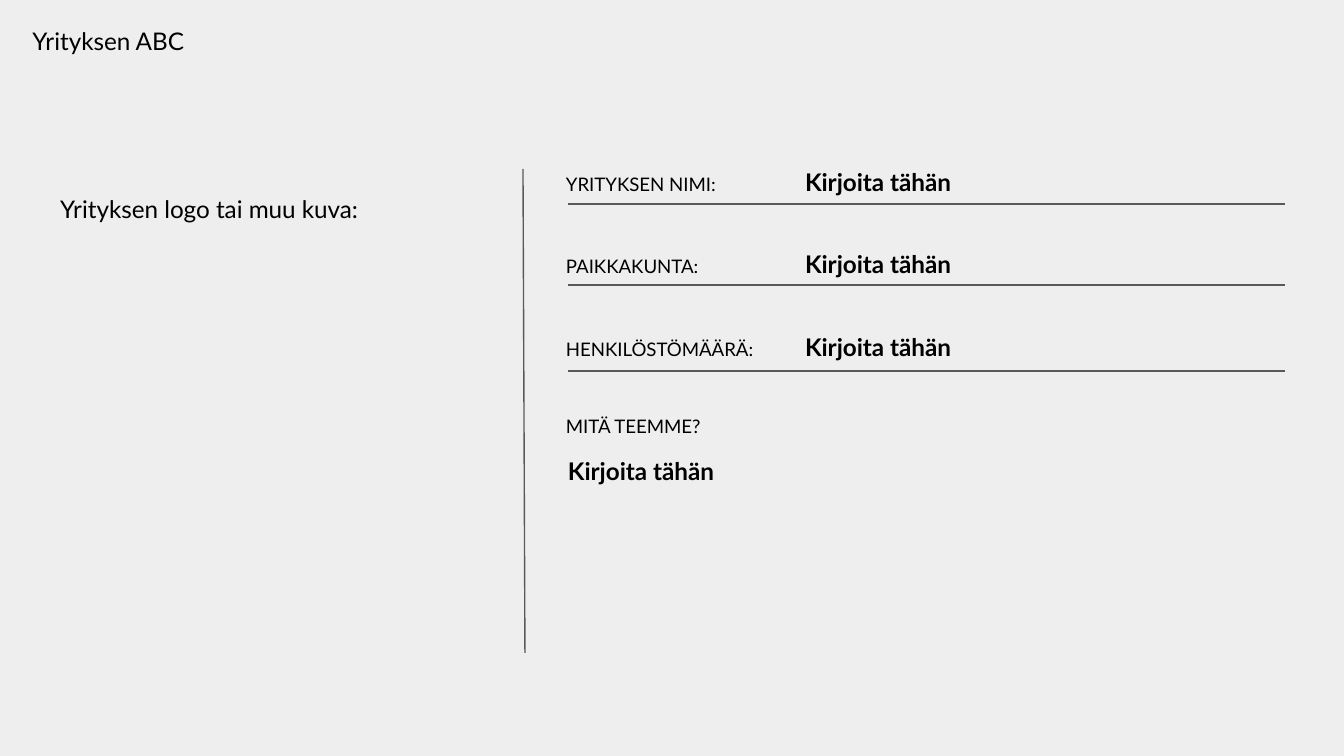
import dataclasses

import pptx
import pptx.dml.color
import pptx.enum.shapes
import pptx.enum.text
import pptx.oxml.ns
import pptx.util
from lxml import etree

EMU_PER_PX = 914400 / 134.4
PAGE_SIZE = (1344, 756)
PROMPT = "Kirjoita tähän"

LABEL_LEFT, LABEL_WIDTH, LABEL_HEIGHT = 566, 223, 23
VALUE_LEFT, VALUE_HEIGHT = 805, 30
RULE_LEFT, RULE_RIGHT = 568, 1285
LABEL_DROP = 6

# label, top of the value, height of the rule below
FIELDS = [
    ("YRITYKSEN NIMI:", 167, 204),
    ("PAIKKAKUNTA:", 249, 285),
    ("HENKILÖSTÖMÄÄRÄ:", 332, 371),
]


@dataclasses.dataclass(frozen=True)
class Theme:
    font: str = "Lato"
    background: str = "EEEEEE"
    text: str = "000000"
    rule: str = "595959"
    body_size: int = 13
    label_size: int = 10
    rule_width: float = 0.75


THEME = Theme()


def px(length):
    return pptx.util.Emu(round(length * EMU_PER_PX))


def color(code):
    return pptx.dml.color.RGBColor.from_string(code)


def write(box, text, size, bold=False, inset=0, line_spacing=None):
    frame = box.text_frame
    frame.text = text
    frame.word_wrap = True
    frame.vertical_anchor = pptx.enum.text.MSO_ANCHOR.TOP
    fit = pptx.enum.text.MSO_AUTO_SIZE
    frame.auto_size = fit.NONE if inset else fit.SHAPE_TO_FIT_TEXT
    frame.margin_left = frame.margin_right = pptx.util.Inches(inset)
    frame.margin_top = frame.margin_bottom = pptx.util.Inches(inset)
    para = frame.paragraphs[0]
    para.alignment = pptx.enum.text.PP_ALIGN.LEFT
    if line_spacing:
        para.line_spacing = line_spacing
    font = para.runs[0].font
    font.name = THEME.font
    font.size = pptx.util.Pt(size)
    font.bold = bold
    font.color.rgb = color(THEME.text)


def add_title(page, text, left, top, width, height):
    title = page.shapes.title
    title.left, title.top = px(left), px(top)
    title.width, title.height = px(width), px(height)
    write(title, text, THEME.body_size, inset=0.1)


def add_text(page, text, left, top, width, height, size, **style):
    box = page.shapes.add_textbox(px(left), px(top), px(width), px(height))
    write(box, text, size, **style)


def add_label(page, text, top):
    add_text(page, text, LABEL_LEFT, top, LABEL_WIDTH, LABEL_HEIGHT, THEME.label_size)


def add_value(page, left, top, line_spacing=None):
    add_text(page, PROMPT, left, top, RULE_RIGHT - left, VALUE_HEIGHT,
             THEME.body_size, bold=True, line_spacing=line_spacing)


def add_rule(page, x1, y1, x2, y2):
    rule = page.shapes.add_connector(
        pptx.enum.shapes.MSO_CONNECTOR.STRAIGHT, px(x1), px(y1), px(x2), px(y2))
    rule.line.color.rgb = color(THEME.rule)
    rule.line.width = pptx.util.Pt(THEME.rule_width)
    etree.SubElement(rule._element.spPr, pptx.oxml.ns.qn("a:effectLst"))


def add_field(page, label, value_top, rule_y):
    add_label(page, label, value_top + LABEL_DROP)
    add_value(page, VALUE_LEFT, value_top)
    add_rule(page, RULE_LEFT, rule_y, RULE_RIGHT, rule_y)


def main():
    deck = pptx.Presentation()
    deck.slide_width, deck.slide_height = map(px, PAGE_SIZE)
    page = deck.slides.add_slide(deck.slide_layouts.get_by_name("Title Only"))
    page.background.fill.solid()
    page.background.fill.fore_color.rgb = color(THEME.background)

    add_title(page, "Yrityksen ABC", 19, 13, 821, 44)
    add_text(page, "Yrityksen logo tai muu kuva:", 47, 181, 411, 58,
             THEME.body_size, inset=0.1)
    add_rule(page, 523, 169, 525, 653)
    for field in FIELDS:
        add_field(page, *field)
    add_label(page, "MITÄ TEEMME?", 415)
    add_value(page, RULE_LEFT, 452, line_spacing=1.15)
    deck.save("out.pptx")


if __name__ == "__main__":
    main()
